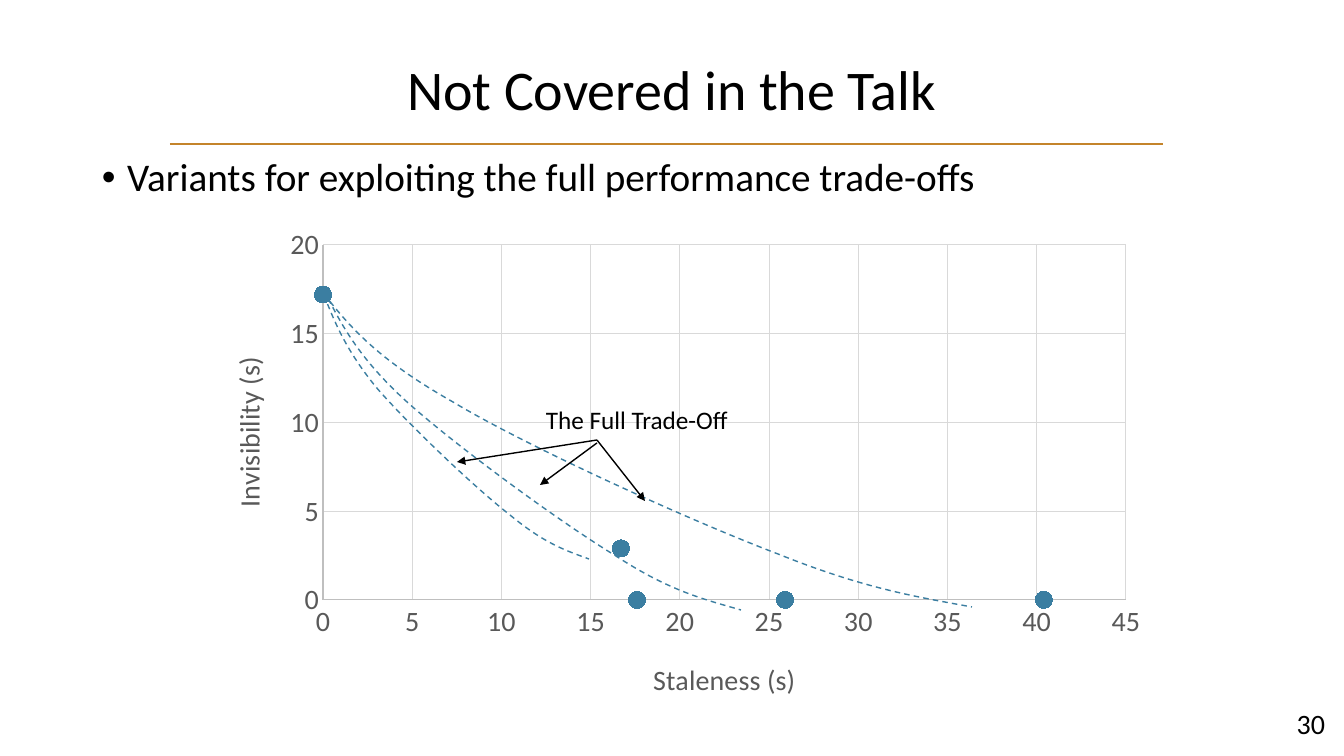
from lxml import etree
from pptx import Presentation
from pptx import util as u
from pptx.chart.data import XyChartData
from pptx.dml.color import RGBColor
from pptx.enum import chart as ch, dml, shapes, text
from pptx.oxml.ns import qn

EMU_PER_PX = 914400 / 100.8
FONT, BLACK, GREY, BLUE = "Calibri", "000000", "595959", "3B7EA1"
CHART_BOX = (209, 218, 951, 498)
POINTS = [(17.6, 0), (40.4, 0), (16.7, 2.9), (0, 17.2), (25.9, 0)]
CURVES = [
    [(324, 294), (350, 327), (377, 359), (453, 402), (528, 447), (691, 521),
     (778, 554), (865, 589), (918, 597), (972, 607)],
    [(324, 290), (341, 324), (358, 357), (406, 401), (456, 446), (560, 522),
     (616, 556), (671, 592), (707, 600), (741, 610)],
    [(324, 295), (335, 323), (346, 350), (376, 387), (407, 423), (474, 487),
     (510, 515), (545, 544), (567, 551), (589, 559)],
]
ARROWS = [((597, 440), (457, 462)), ((597, 440), (645, 501)),
          ((597, 443), (540, 485))]


def px(n):
    return u.Emu(round(n * EMU_PER_PX))


def rgb(value):
    return RGBColor.from_string(value)


def apply(obj, **values):
    for name, value in values.items():
        setattr(obj, name, value)


def set_font(font, size, color):
    apply(font, name=FONT, size=u.Pt(size), bold=False)
    font.color.rgb = rgb(color)


def set_line(line, color, width):
    line.color.rgb = rgb(color)
    line.width = u.Pt(width)


def add_text(slide, box, content, size, bullet=False, wrap=True,
             anchor=text.MSO_ANCHOR.TOP, **paragraph):
    tf = slide.shapes.add_textbox(*map(px, box)).text_frame
    apply(tf, word_wrap=wrap, vertical_anchor=anchor)
    p = tf.paragraphs[0]
    apply(p, **paragraph)
    if bullet:
        pPr = p._p.get_or_add_pPr()
        pPr.set("marL", str(u.Inches(0.25)))
        pPr.set("indent", str(u.Inches(-0.25)))
        etree.SubElement(pPr, qn("a:buFont")).set("typeface", "Arial")
        etree.SubElement(pPr, qn("a:buChar")).set("char", "•")
    r = p.add_run()
    r.text = content
    set_font(r.font, size, BLACK)


def add_line(slide, start, end, color, width, arrow=False):
    c = slide.shapes.add_connector(shapes.MSO_CONNECTOR.STRAIGHT,
                                   *map(px, start + end))
    set_line(c.line, color, width)
    if arrow:
        ln = c.line._get_or_add_ln()
        etree.SubElement(ln, qn("a:tailEnd")).set("type", "triangle")
    etree.SubElement(c._element.spPr, qn("a:effectLst"))


def add_curve(slide, nodes):
    start, *rest = [tuple(map(px, node)) for node in nodes]
    fb = slide.shapes.build_freeform(*start)
    fb.add_line_segments(rest, close=False)
    sp = fb.convert_to_shape()
    segments = list(sp._element.iter(qn("a:lnTo")))
    outline = segments[0].getparent()
    for i in range(0, len(segments), 3):
        cubic = etree.SubElement(outline, qn("a:cubicBezTo"))
        for segment in segments[i:i + 3]:
            cubic.append(segment[0])
            outline.remove(segment)
    sp.shadow.inherit = False
    sp.fill.background()
    set_line(sp.line, BLUE, 1)
    sp.line.dash_style = dml.MSO_LINE.DASH


def set_layout(parent, index, x, y, **size):
    for old in parent.findall(qn("c:layout")):
        parent.remove(old)
    left, top, width, height = CHART_BOX
    values = {"layoutTarget": "inner"} if size else {}
    values.update(xMode="edge", yMode="edge",
                  x=(x - left) / width, y=(y - top) / height)
    if size:
        values.update(w=size["w"] / width, h=size["h"] / height)
    layout = etree.Element(qn("c:layout"))
    manual = etree.SubElement(layout, qn("c:manualLayout"))
    for tag, value in values.items():
        etree.SubElement(manual, qn("c:" + tag)).set("val", str(value))
    parent.insert(index, layout)


def format_axis(axis, title, maximum, x, y):
    apply(axis, minimum_scale=0, maximum_scale=maximum, major_unit=5,
          has_major_gridlines=True, has_title=True,
          major_tick_mark=ch.XL_TICK_MARK.NONE,
          minor_tick_mark=ch.XL_TICK_MARK.NONE)
    set_line(axis.format.line, "BFBFBF", 0.75)
    set_line(axis.major_gridlines.format.line, "D9D9D9", 0.75)
    set_font(axis.tick_labels.font, 20, GREY)
    apply(axis.tick_labels, number_format="General",
          number_format_is_linked=False)
    p = axis.axis_title.text_frame.paragraphs[0]
    r = p.add_run()
    r.text = title
    set_font(r.font, 20, GREY)
    set_layout(axis.axis_title._element, 1, x, y)


def add_scatter(slide):
    data = XyChartData()
    series = data.add_series("Series 1")
    for point in POINTS:
        series.add_data_point(*point)
    chart = slide.shapes.add_chart(ch.XL_CHART_TYPE.XY_SCATTER,
                                   *map(px, CHART_BOX), data).chart
    apply(chart, has_legend=False, has_title=False)
    set_font(chart.font, 10, BLACK)
    plot = chart.plots[0]
    plot.vary_by_categories = False
    s = plot.series[0]
    s.format.line.fill.background()
    apply(s.marker, style=ch.XL_MARKER_STYLE.CIRCLE, size=12)
    s.marker.format.fill.solid()
    s.marker.format.fill.fore_color.rgb = rgb(BLUE)
    set_line(s.marker.format.line, BLUE, 0.75)
    format_axis(chart.category_axis, "Staleness (s)", 45, 648, 655)
    format_axis(chart.value_axis, "Invisibility (s)", 20, 224, 352)
    plot_area = chart._chartSpace.find(".//" + qn("c:plotArea"))
    set_layout(plot_area, 0, 323, 245, w=803, h=355)


def main():
    prs = Presentation()
    apply(prs, slide_width=px(1344), slide_height=px(756))
    slide = prs.slides.add_slide(prs.slide_layouts[6])
    middle = text.MSO_ANCHOR.MIDDLE
    add_line(slide, (170, 144), (1163, 144), "C4842B", 2)
    add_text(slide, (92, 40, 1159, 105), "Not Covered in the Talk", 40,
             anchor=middle, alignment=text.PP_ALIGN.CENTER, line_spacing=0.9)
    add_text(slide, (1247, 703, 88, 40), "30", 20, anchor=middle,
             alignment=text.PP_ALIGN.RIGHT)
    add_text(slide, (92, 153, 1214, 73),
             "Variants for exploiting the full performance trade-offs", 28,
             bullet=True, line_spacing=0.9)
    add_scatter(slide)
    for nodes in CURVES:
        add_curve(slide, nodes)
    add_text(slide, (536, 399, 215, 40), "The Full Trade-Off", 18, wrap=False)
    for start, end in ARROWS:
        add_line(slide, start, end, BLACK, 1, arrow=True)
    prs.save("out.pptx")


if __name__ == "__main__":
    main()
